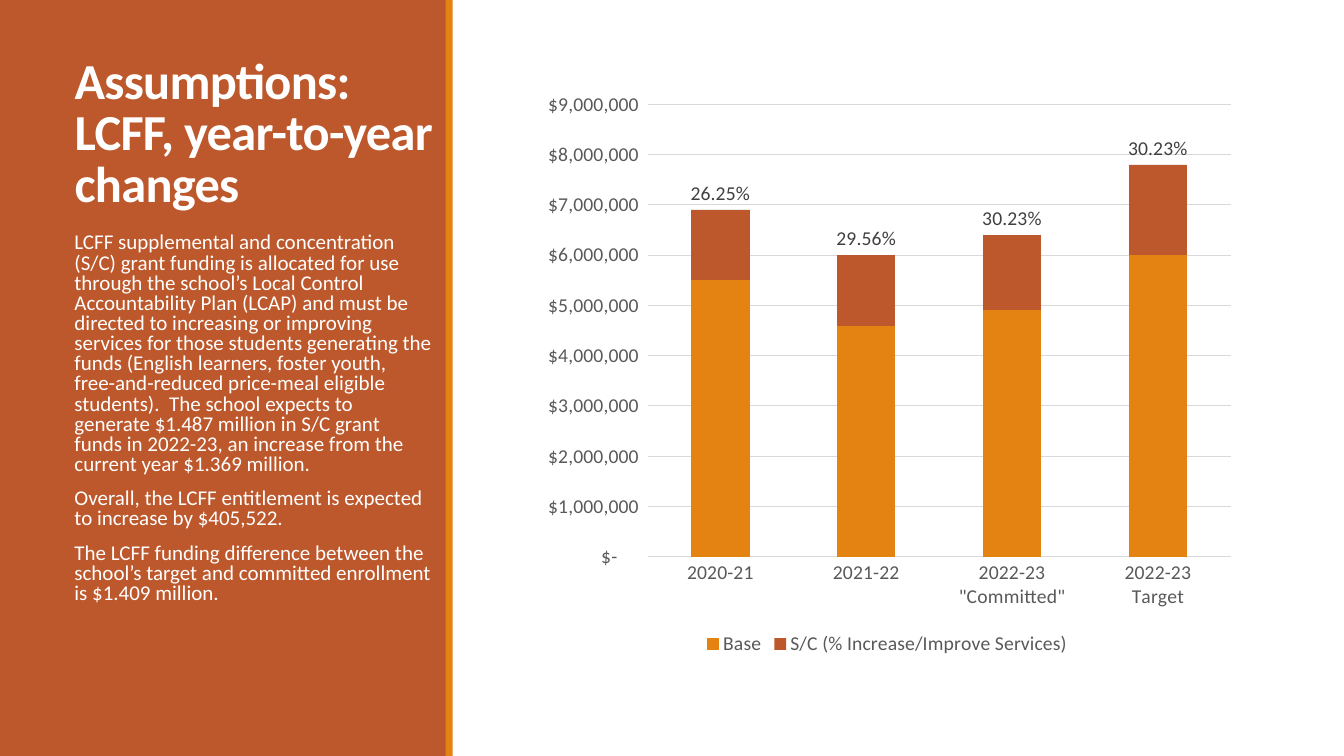
from dataclasses import dataclass

from lxml.etree import SubElement
from pptx import Presentation
from pptx.chart.data import CategoryChartData
from pptx.dml.color import RGBColor
from pptx.enum.chart import XL_CHART_TYPE, XL_LABEL_POSITION, XL_LEGEND_POSITION, XL_TICK_MARK
from pptx.enum.shapes import MSO_SHAPE
from pptx.enum.text import MSO_ANCHOR, MSO_AUTO_SIZE, PP_ALIGN
from pptx.oxml.ns import qn
from pptx.util import Inches, Pt

FONT = "Calibri"
HEX = {"rust": "BD582C", "gold": "E48312", "brown": "865640", "tan": "9B8357",
       "white": "FFFFFF", "grid": "D9D9D9", "gray": "595959", "dark": "404040"}
MONEY = r'_("$"* #,##0_);_("$"* \(#,##0\);_("$"* "-"??_);_(@_)'


@dataclass
class Band:
    """A full-height strip of the side panel."""
    left: float
    width: float
    color: str


@dataclass
class Series:
    """One layer of the stacked columns."""
    name: str
    vals: tuple[float | None, ...]
    color: str
    keyed: bool = True


BANDS = [Band(0, 4.43, "rust"), Band(4.42, 0.07, "gold")]
YEARS = ["2020-21", "2021-22", '2022-23\n"Committed"', "2022-23\nTarget"]
LAYERS = [
    Series("Base", (5500000, 4600000, 4900000, 6000000), "gold"),
    Series("S/C (% Increase/Improve Services)", (1400000, 1400000, 1500000, 1800000), "rust"),
    Series("Series 3", (0.2625, 0.2956, 0.3023, 0.3023), "brown", False),
    Series("Series 4", (None,) * 4, "tan", False),
]
TITLE = "Assumptions:\vLCFF, year-to-year changes"
NOTES = [
    "LCFF supplemental and concentration (S/C) grant funding is allocated for use through "
    "the school’s Local Control Accountability Plan (LCAP) and must be directed to "
    "increasing or improving services for those students generating the funds (English "
    "learners, foster youth, free-and-reduced price-meal eligible students).  The school "
    "expects to generate $1.487 million in S/C grant funds in 2022-23, an increase from the "
    "current year $1.369 million.",
    "Overall, the LCFF entitlement is expected to increase by $405,522.",
    "The LCFF funding difference between the school’s target and committed enrollment is "
    "$1.409 million.",
]


def rgb(name: str) -> RGBColor:
    """Look up a named colour."""
    return RGBColor.from_string(HEX[name])


def style(font, size: float, color: str, bold: bool = False) -> None:
    """Set the face, size, colour and weight of a font."""
    font.name, font.size, font.bold = FONT, Pt(size), bold
    font.color.rgb = rgb(color)


def write(shape, lines: list[str], *, size: float, color: str = "white", bold: bool = False,
          lead: float = 1, gap: float = 0, track: float = 0,
          anchor: MSO_ANCHOR = MSO_ANCHOR.TOP) -> None:
    """Fill a shape with formatted paragraphs."""
    frame = shape.text_frame
    frame.word_wrap, frame.auto_size = True, MSO_AUTO_SIZE.NONE
    frame.vertical_anchor = anchor
    for i, line in enumerate(lines):
        para = frame.add_paragraph() if i else frame.paragraphs[0]
        para.text, para.alignment = line, PP_ALIGN.LEFT
        para.line_spacing, para.space_before = lead, Pt(gap if i else 0)
        for run in para.runs:
            style(run.font, size, color, bold)
            if track:
                run.font._element.set("spc", str(round(track * 100)))


def draw_band(slide, band: Band) -> None:
    """Draw one strip of the side panel."""
    shape = slide.shapes.add_shape(MSO_SHAPE.RECTANGLE, Inches(band.left), 0,
                                   Inches(band.width), Inches(7.5))
    shape.shadow.inherit = False
    shape.fill.solid()
    shape.fill.fore_color.rgb = rgb(band.color)
    shape.line.fill.background()


def draw_chart(slide) -> None:
    """Draw the stacked columns with a percent above each."""
    data = CategoryChartData()
    data.categories = YEARS
    for layer in LAYERS:
        data.add_series(layer.name, layer.vals)
    chart = slide.shapes.add_chart(XL_CHART_TYPE.COLUMN_STACKED, Inches(5.25), Inches(0.8),
                                   Inches(7.1), Inches(5.75), data).chart
    style(chart.font, 14, "gray")
    chart.has_title = False
    plot = chart.plots[0]
    plot.gap_width, plot.overlap, plot.vary_by_categories = 150, 100, False
    for series, layer in zip(plot.series, LAYERS):
        series.format.fill.solid()
        series.format.fill.fore_color.rgb = rgb(layer.color)

    labels = plot.series[2].data_labels
    labels.show_value, labels.position = True, XL_LABEL_POSITION.INSIDE_BASE
    labels.number_format, labels.number_format_is_linked = "0.00%", False
    style(labels.font, 14, "dark")

    for axis in (chart.category_axis, chart.value_axis):
        axis.major_tick_mark = axis.minor_tick_mark = XL_TICK_MARK.NONE
        style(axis.tick_labels.font, 14, "gray")
    values = chart.value_axis
    values.minimum_scale, values.maximum_scale, values.major_unit = 0, 9000000, 1000000
    values.tick_labels.number_format = MONEY
    values.tick_labels.number_format_is_linked = False
    values.format.line.fill.background()
    for line in (chart.category_axis.format.line, values.major_gridlines.format.line):
        line.color.rgb, line.width = rgb("grid"), Pt(0.75)

    chart.has_legend = True
    legend = chart.legend
    legend.position, legend.include_in_layout = XL_LEGEND_POSITION.BOTTOM, False
    style(legend.font, 14, "gray")
    mark = legend._element.find(qn("c:legendPos"))
    for i, layer in enumerate(LAYERS):
        if not layer.keyed:
            entry = SubElement(legend._element, qn("c:legendEntry"))
            SubElement(entry, qn("c:idx")).set("val", str(i))
            SubElement(entry, qn("c:delete")).set("val", "1")
            mark.addnext(entry)
            mark = entry


def main() -> None:
    """Build and save the slide."""
    deck = Presentation()
    deck.slide_width, deck.slide_height = Inches(13.33), Inches(7.5)
    slide = deck.slides.add_slide(deck.slide_layouts[5])
    for band in BANDS:
        draw_band(slide, band)
    draw_chart(slide)
    body = slide.shapes.add_textbox(Inches(0.64), Inches(2.27), Inches(3.74), Inches(4.17))
    write(body, NOTES, size=15, lead=0.8, gap=10)
    title = slide.shapes.title
    title.left, title.top = Inches(0.64), Inches(0.6)
    title.width, title.height = Inches(3.75), Inches(1.56)
    write(title, [TITLE], size=36, bold=True, lead=0.85, track=-0.5, anchor=MSO_ANCHOR.BOTTOM)
    body._element.addnext(title._element)
    deck.save("out.pptx")


if __name__ == "__main__":
    main()
